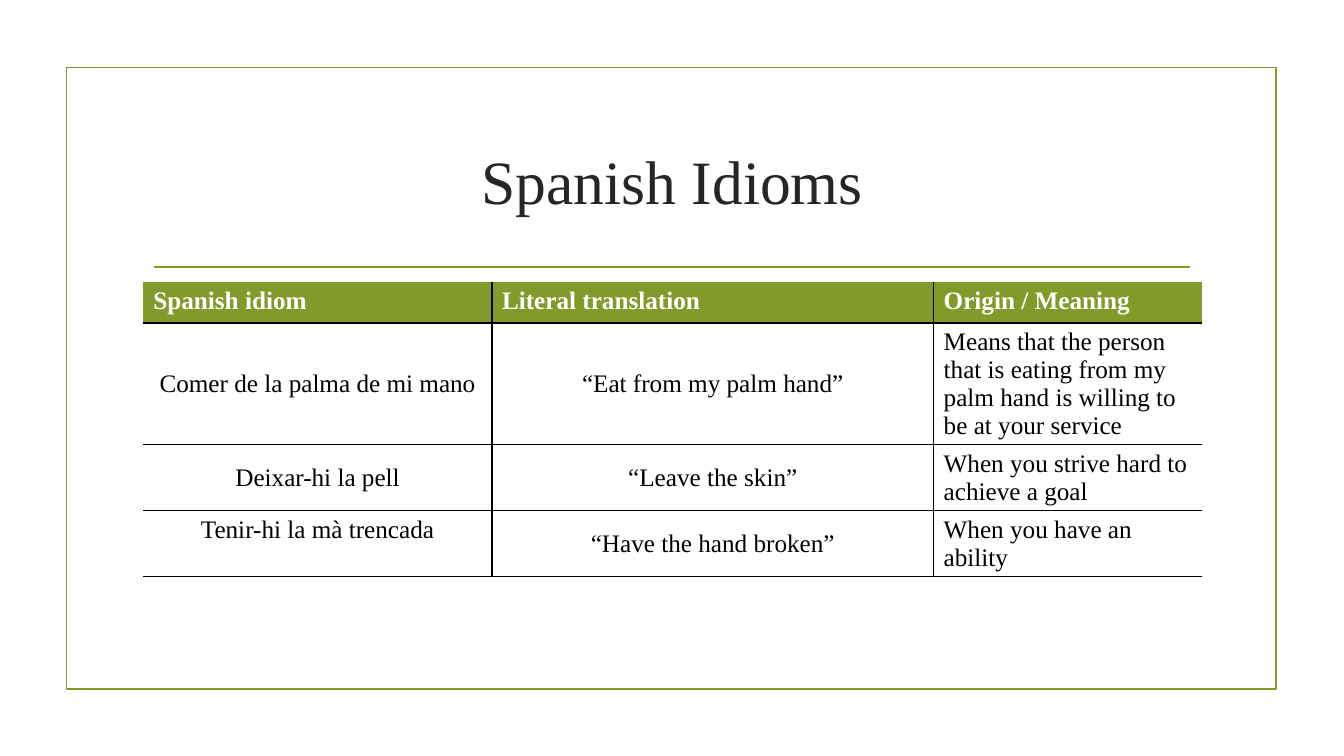
from lxml.etree import SubElement
from pptx import Presentation
from pptx.dml.color import RGBColor
from pptx.enum.shapes import MSO_CONNECTOR, MSO_SHAPE
from pptx.enum.text import MSO_ANCHOR, PP_ALIGN
from pptx.oxml import parse_xml
from pptx.oxml.ns import nsdecls, qn
from pptx.util import Cm, Pt

GREEN, BLACK, WHITE, DARK = "83992A", "000000", "FFFFFF", "262626"
FONT = "Times New Roman"
COL_WIDTHS = [8.79, 11.13, 6.76]
ROW_HEIGHTS = [1.03, 3.07, 1.66, 1.66]
ROWS = [
    ["Spanish idiom", "Literal translation", "Origin / Meaning"],
    ["Comer de la palma de mi mano", "“Eat from my palm hand”",
     "Means that the person that is eating from my palm hand is willing to be at your service"],
    ["Deixar-hi la pell", "“Leave the skin”", "When you strive hard to achieve a goal"],
    ["Tenir-hi la mà trencada", "“Have the hand broken”", "When you have an ability"],
]


def rgb(value):
    """Turn a hex string into a colour."""
    return RGBColor.from_string(value)


def write(tf, text, size=18, color=BLACK, bold=False, align=PP_ALIGN.LEFT, anchor=MSO_ANCHOR.TOP):
    """Put one formatted paragraph into a text frame or cell."""
    tf.vertical_anchor = anchor
    p = getattr(tf, "text_frame", tf).paragraphs[0]
    p.alignment = align
    r = p.add_run()
    r.text = text
    r.font.name, r.font.size, r.font.bold = FONT, Pt(size), bold
    r.font.color.rgb = rgb(color)


def add_frame(slide, x, y, w, h):
    """Draw the outlined frame around the content."""
    sp = slide.shapes.add_shape(MSO_SHAPE.RECTANGLE, Cm(x), Cm(y), Cm(w), Cm(h))
    sp.shadow.inherit = False
    sp.fill.background()
    sp.line.color.rgb = rgb(GREEN)
    sp.line.width = Pt(1.25)
    slide.shapes._spTree.insert(2, sp._element)


def add_rule(slide, x1, x2, y):
    """Draw the horizontal rule below the title."""
    line = slide.shapes.add_connector(MSO_CONNECTOR.STRAIGHT, Cm(x1), Cm(y), Cm(x2), Cm(y))
    line.line.color.rgb = rgb(GREEN)
    line.line.width = Pt(1.25)
    SubElement(line._element.spPr, qn("a:effectLst"))


def add_title(slide, text, x, y, w, h):
    """Place and format the title placeholder."""
    sp = slide.shapes.title
    sp.left, sp.top, sp.width, sp.height = Cm(x), Cm(y), Cm(w), Cm(h)
    write(sp.text_frame, text, size=44, color=DARK, align=PP_ALIGN.CENTER, anchor=MSO_ANCHOR.MIDDLE)


def set_borders(cell, sides):
    """Rule the named sides of a cell and clear the others."""
    tcPr = cell._tc.get_or_add_tcPr()
    for i, side in enumerate("LRTB"):
        paint = f'<a:solidFill><a:srgbClr val="{BLACK}"/></a:solidFill>' if side in sides else "<a:noFill/>"
        tcPr.insert(i, parse_xml(f'<a:ln{side} {nsdecls("a")} w="12700">{paint}</a:ln{side}>'))


def format_cell(cell, text, row, col):
    """Fill, rule and write one cell according to its place."""
    last_row, last_col = len(ROWS) - 1, len(COL_WIDTHS) - 1
    if row == 0:
        cell.fill.solid()
        cell.fill.fore_color.rgb = rgb(GREEN)
        write(cell, text, color=WHITE, bold=True)
    elif col == last_col:
        cell.fill.background()
        write(cell, text)
    else:
        cell.fill.background()
        top = row == last_row and col == 0
        write(cell, text, align=PP_ALIGN.CENTER, anchor=MSO_ANCHOR.TOP if top else MSO_ANCHOR.MIDDLE)
    set_borders(cell, "B" + "T" * (row > 0) + "L" * (col > 0) + "R" * (col < last_col))


def add_idiom_table(slide, x, y):
    """Add the table of idioms."""
    table = slide.shapes.add_table(len(ROWS), len(COL_WIDTHS), Cm(x), Cm(y),
                                   Cm(sum(COL_WIDTHS)), Cm(sum(ROW_HEIGHTS))).table
    table.horz_banding = False
    for column, width in zip(table.columns, COL_WIDTHS):
        column.width = Cm(width)
    for i, (height, texts) in enumerate(zip(ROW_HEIGHTS, ROWS)):
        table.rows[i].height = Cm(height)
        for j, text in enumerate(texts):
            format_cell(table.cell(i, j), text, i, j)


def main():
    """Build and save the slide."""
    prs = Presentation()
    prs.slide_width, prs.slide_height = Cm(33.87), Cm(19.05)
    s = prs.slides.add_slide(prs.slide_layouts[5])
    add_frame(s, 1.68, 1.7, 30.48, 15.67)
    add_rule(s, 3.89, 30, 6.73)
    add_title(s, "Spanish Idioms", 3.61, 2.72, 26.67, 3.63)
    add_idiom_table(s, 3.61, 7.11)
    prs.save("out.pptx")


if __name__ == "__main__":
    main()
